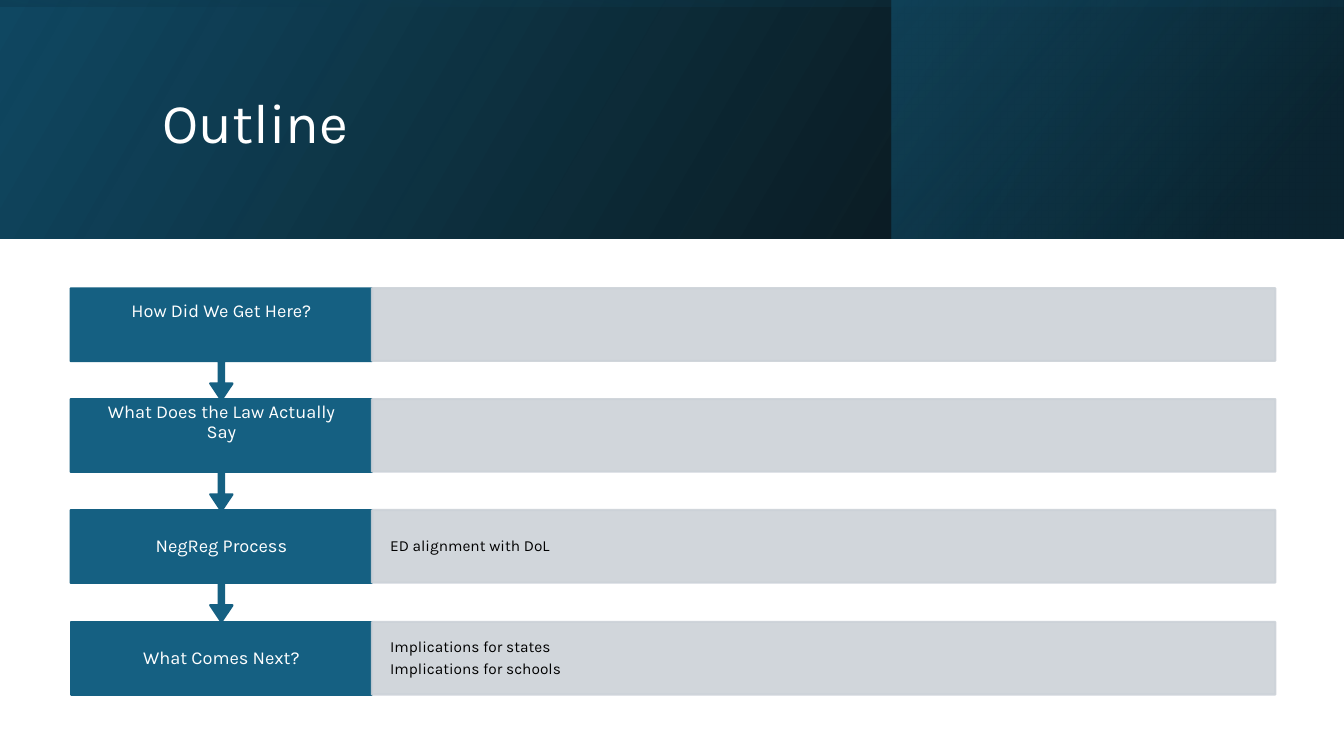
from lxml.etree import SubElement
from pptx import Presentation
from pptx.dml.color import RGBColor
from pptx.enum.shapes import MSO_SHAPE
from pptx.enum.text import MSO_ANCHOR, PP_ALIGN
from pptx.oxml.ns import qn
from pptx.util import Pt

PX = 9144
FONT = "Karla"
WHITE = RGBColor(0xFF, 0xFF, 0xFF)
BLACK = RGBColor(0x00, 0x00, 0x00)
NAVY = RGBColor(0x10, 0x48, 0x62)
INK = RGBColor(0x0B, 0x30, 0x41)
BLUE = RGBColor(0x15, 0x60, 0x82)
GREY = RGBColor(0xCC, 0xD2, 0xD8)

TITLE = "Outline"
STEPS = [
    ("How Did We Get Here?", ""),
    ("What Does the Law Actually Say", ""),
    ("NegReg Process", "ED alignment with DoL"),
    ("What Comes Next?", "Implications for states\nImplications for schools"),
]
LABEL_H = [47, 47, 72, 72]
BANDS = [
    ((0, 0, 1333, 237), 0, 30, [(0, BLACK, 96), (100, NAVY, 100)]),
    ((884, 0, 448, 237), 0, 40, [(19, INK, 68), (100, BLUE, 48)]),
    ((548, -548, 237, 1333), 270, 10, [(23, NAVY, 16), (99, BLACK, 45)]),
]
LEFT, LABEL_W, DETAIL_W = 70, 299, 896
TOP, SPAN, BOX_H, CALLOUT_H = 286, 331, 72, 111


def emu(*lengths):
    return [n * PX for n in lengths]


def set_alpha(sp, alphas):
    colors = list(sp._element.spPr.iter(qn("a:srgbClr")))
    for color, alpha in zip(colors, alphas):
        SubElement(color, qn("a:alpha")).set("val", str(alpha * 1000))


def add_band(s, box, rotation, angle, stops):
    sp = s.shapes.add_shape(MSO_SHAPE.RECTANGLE, *emu(*box))
    sp.shadow.inherit = False
    sp.rotation = rotation
    sp._element.spPr.find(qn("a:xfrm")).set("flipH", "1")
    sp.line.fill.background()
    sp.fill.gradient()
    sp.fill.gradient_angle = angle
    for stop, (position, color, _) in zip(sp.fill.gradient_stops, stops):
        stop.position = position / 100
        stop.color.rgb = color
    set_alpha(sp, [alpha for _, _, alpha in stops])


def add_box(s, kind, box, color):
    sp = s.shapes.add_shape(kind, *emu(*box))
    sp.shadow.inherit = False
    sp.fill.solid()
    sp.fill.fore_color.rgb = color
    sp.line.color.rgb = color
    sp.line.width = Pt(1.5)
    return sp


def write(tf, text, size, color, align, insets=(10, 5), after=0):
    tf.text = text
    tf.word_wrap = True
    tf.vertical_anchor = MSO_ANCHOR.MIDDLE
    tf.margin_left = tf.margin_right = insets[0] * PX
    tf.margin_top = tf.margin_bottom = insets[1] * PX
    for p in tf.paragraphs:
        p.alignment = align
        p.line_spacing = 0.9
        p.space_after = Pt(after)
        for r in p.runs:
            r.font.name = FONT
            r.font.size = Pt(size)
            r.font.color.rgb = color


def add_step(s, i):
    label, detail = STEPS[i]
    last = len(STEPS) - 1
    top = TOP + SPAN * i // last
    if i < last:
        sp = add_box(s, MSO_SHAPE.UP_ARROW_CALLOUT, (LEFT, top, LABEL_W, CALLOUT_H), BLUE)
        sp.rotation = 180
        for k, value in enumerate((0.05, 0.1, 0.15, 0.65)):
            sp.adjustments[k] = value
    else:
        add_box(s, MSO_SHAPE.RECTANGLE, (LEFT, top, LABEL_W, BOX_H), BLUE)
    tb = s.shapes.add_textbox(*emu(LEFT, top, LABEL_W, LABEL_H[i]))
    write(tb.text_frame, label, 13, WHITE, PP_ALIGN.CENTER, (21, 10), 4.5)
    sp = add_box(s, MSO_SHAPE.RECTANGLE, (LEFT + LABEL_W, top, DETAIL_W, BOX_H), GREY)
    set_alpha(sp, (90, 90))
    if detail:
        write(sp.text_frame, detail, 11, BLACK, PP_ALIGN.LEFT, (18, 15), 4)


def main():
    """Build the outline slide."""
    prs = Presentation()
    prs.slide_width, prs.slide_height = emu(1333, 750)
    s = prs.slides.add_slide(prs.slide_layouts[5])
    for band in BANDS:
        add_band(s, *band)
    title = s.shapes.title
    title.left, title.top, title.width, title.height = emu(151, 38, 1063, 172)
    write(title.text_frame, TITLE, 40, WHITE, PP_ALIGN.LEFT)
    s.shapes._spTree.append(title._element)
    for i in reversed(range(len(STEPS))):
        add_step(s, i)
    prs.save("out.pptx")


if __name__ == "__main__":
    main()
